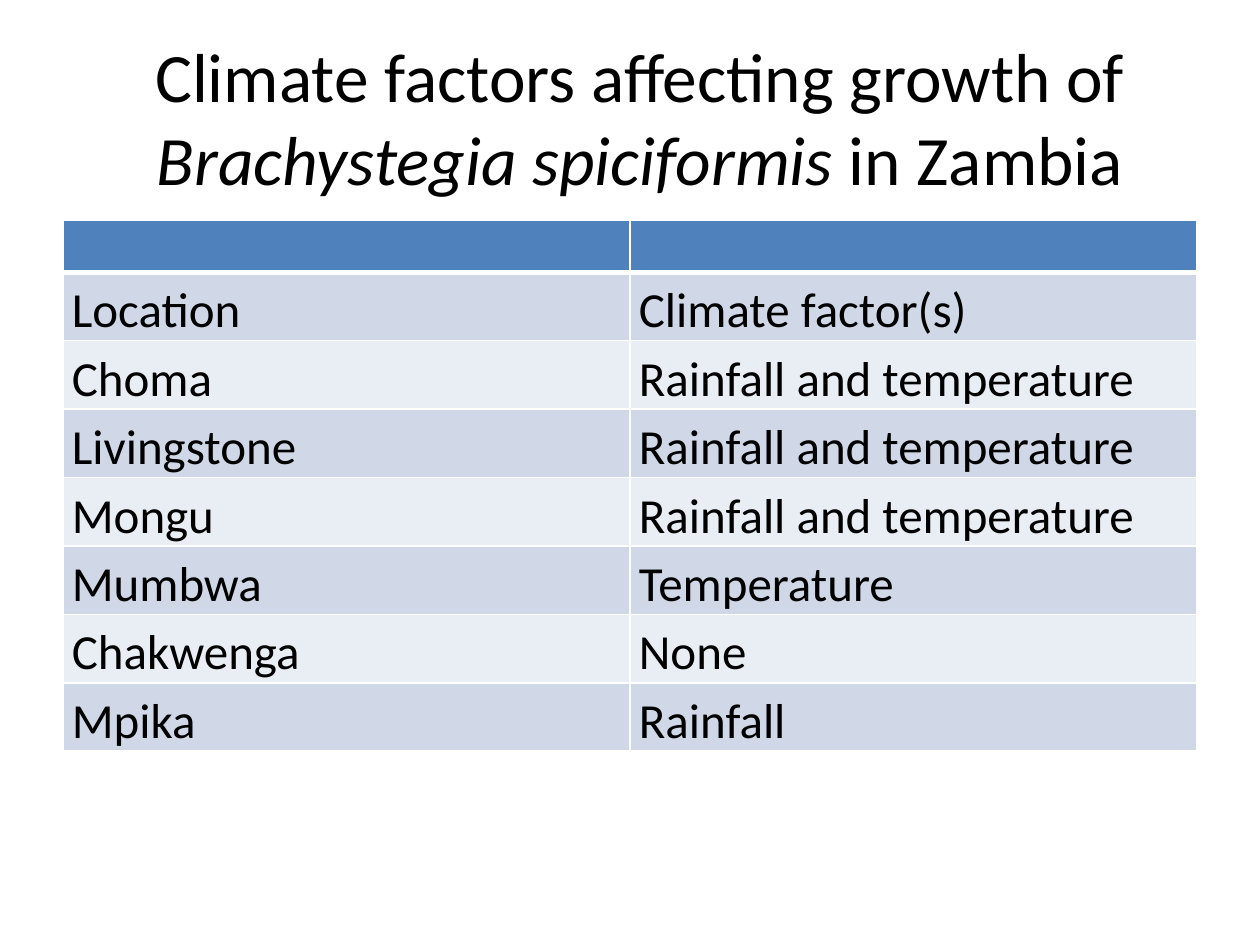
from lxml import etree
from pptx import Presentation
from pptx.dml.color import RGBColor
from pptx.enum import text
from pptx.oxml.ns import qn
from pptx.util import Cm, Pt

BLACK = RGBColor(0x00, 0x00, 0x00)
WHITE = RGBColor(0xFF, 0xFF, 0xFF)
HEADER_BLUE = RGBColor(0x4F, 0x81, 0xBD)
BANDS = (RGBColor(0xD0, 0xD8, 0xE8), RGBColor(0xE9, 0xED, 0xF4))
FONT = "Calibri"

TITLE = (
    ("Climate factors affecting growth of ", False),
    ("Brachystegia spiciformis ", True),
    ("in Zambia", False),
)
CLIMATE_ROWS = (
    ("Location", "Climate factor(s)"),
    ("Choma", "Rainfall and temperature"),
    ("Livingstone", "Rainfall and temperature"),
    ("Mongu", "Rainfall and temperature"),
    ("Mumbwa", "Temperature"),
    ("Chakwenga", "None"),
    ("Mpika", "Rainfall"),
)


def add_span(para, words, size, italic=False):
    span = para.add_run()
    span.text = words
    span.font.name = FONT
    span.font.size = Pt(size)
    span.font.italic = italic
    span.font.color.rgb = BLACK


def add_title(page, left, top, width, height):
    box = page.shapes.add_textbox(left, top, width, height)
    frame = box.text_frame
    frame.word_wrap = True
    frame.vertical_anchor = text.MSO_ANCHOR.MIDDLE
    frame.margin_bottom = Cm(1.57)
    para = frame.paragraphs[0]
    para.alignment = text.PP_ALIGN.CENTER
    for words, italic in TITLE:
        add_span(para, words, 39.6, italic)


def style_cell(cell, color, bottom_width=1):
    cell.fill.solid()
    cell.fill.fore_color.rgb = color
    properties = cell._tc.get_or_add_tcPr()
    edges = (("lnL", 1), ("lnR", 1), ("lnT", 1), ("lnB", bottom_width))
    for position, (edge, width) in enumerate(edges):
        line = etree.Element(qn(f"a:{edge}"), w=str(Pt(width)))
        fill = etree.SubElement(line, qn("a:solidFill"))
        etree.SubElement(fill, qn("a:srgbClr"), val=str(WHITE))
        properties.insert(position, line)


def fill_cell(cell, words):
    cell.margin_left = cell.margin_right = Cm(0.18)
    cell.margin_top = cell.margin_bottom = 0
    para = cell.text_frame.paragraphs[0]
    para.line_spacing = 1.15
    add_span(para, words, 28)


def add_climate_table(page, left, top, width, height):
    header_height = Cm(1.04)
    row_count = len(CLIMATE_ROWS)
    table = page.shapes.add_table(row_count + 1, 2, left, top, width, height).table
    table.rows[0].height = header_height
    for cell in table.rows[0].cells:
        style_cell(cell, HEADER_BLUE, 3)
    for index, entries in enumerate(CLIMATE_ROWS):
        row = table.rows[index + 1]
        row.height = (height - header_height) // row_count
        for cell, words in zip(row.cells, entries):
            style_cell(cell, BANDS[index % 2])
            fill_cell(cell, words)


def main():
    deck = Presentation()
    deck.slide_width, deck.slide_height = Cm(25.4), Cm(19.05)
    page = deck.slides.add_slide(deck.slide_layouts[6])
    add_title(page, Cm(1.47), Cm(0.84), Cm(22.86), Cm(4.45))
    add_climate_table(page, Cm(1.27), Cm(4.45), Cm(22.86), Cm(10.7))
    deck.save("out.pptx")


if __name__ == "__main__":
    main()
